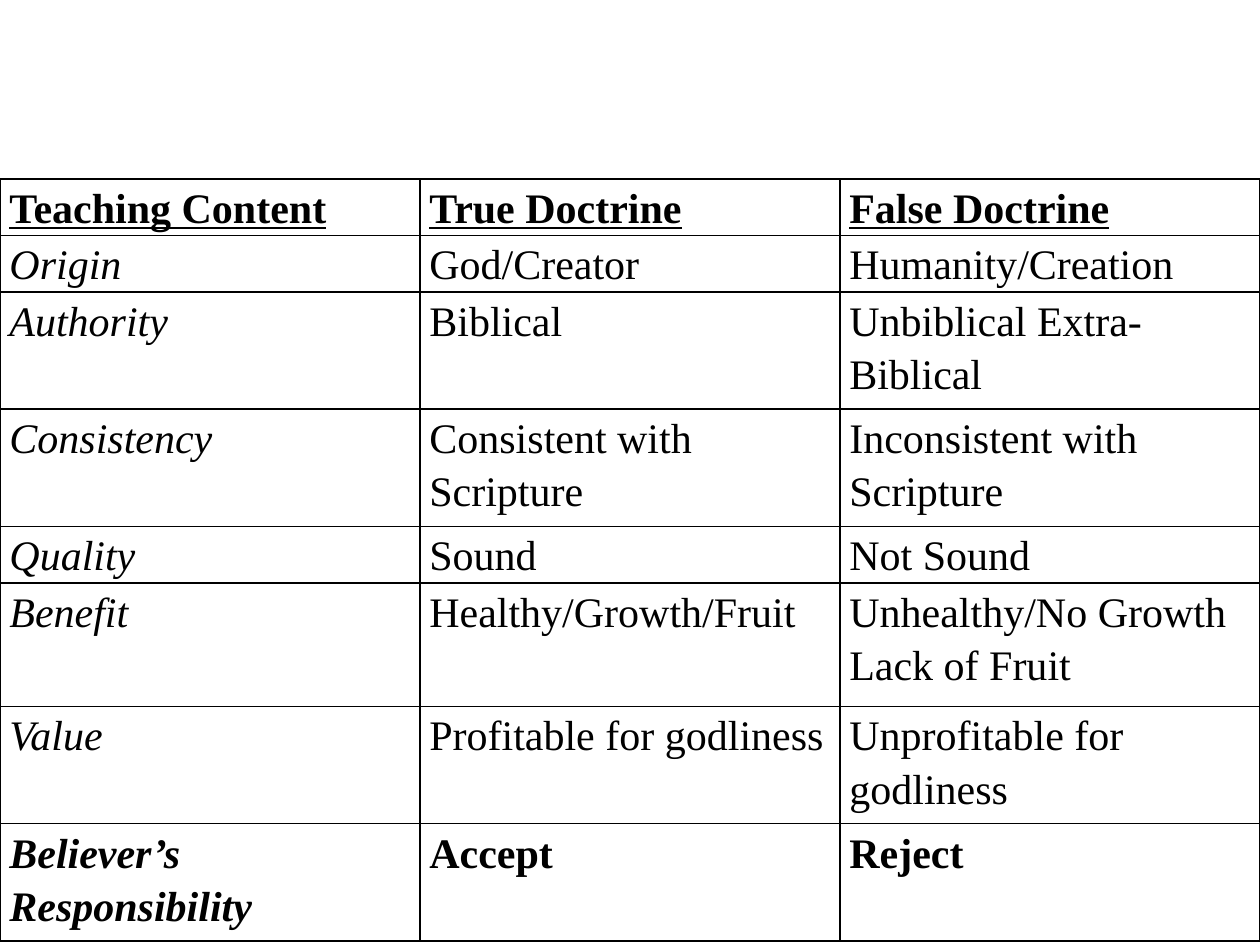
from dataclasses import dataclass

from lxml import etree
from pptx import Presentation
from pptx.dml.color import RGBColor
from pptx.oxml.ns import qn
from pptx.util import Pt

SIDES = ("a:lnL", "a:lnR", "a:lnT", "a:lnB")


@dataclass(frozen=True)
class Theme:
    ink: str = "000000"
    face: str = "Times New Roman"
    size: float = 24
    lead: float = 1.15
    rule: float = 1
    pad: float = 5.4


THEME = Theme()

WIDE, HIGH = 720, 540
TOP = 102.2
LOW, TALL, EXTRA = 32.3, 67, 70.7

ROWS = (
    (LOW, "Teaching Content", "True Doctrine", "False Doctrine"),
    (LOW, "Origin", "God/Creator", "Humanity/Creation"),
    (TALL, "Authority", "Biblical", "Unbiblical Extra-Biblical"),
    (TALL, "Consistency", "Consistent with Scripture",
     "Inconsistent with Scripture"),
    (LOW, "Quality", "Sound", "Not Sound"),
    (EXTRA, "Benefit", "Healthy/Growth/Fruit",
     "Unhealthy/No Growth Lack of Fruit"),
    (TALL, "Value", "Profitable for godliness", "Unprofitable for godliness"),
    (TALL, "Believer’s Responsibility", "Accept", "Reject"),
)


def apply(target, values):
    for name, value in values.items():
        setattr(target, name, value)


def frame(cell):
    """Rule all four sides of a cell."""
    props = cell._tc.get_or_add_tcPr()
    for side in SIDES:
        line = etree.SubElement(props, qn(side), w=str(Pt(THEME.rule)))
        fill = etree.SubElement(line, qn("a:solidFill"))
        etree.SubElement(fill, qn("a:srgbClr"), val=THEME.ink)


def style(row, col):
    """Return the emphasis for a table position."""
    head, last = row == 0, row == len(ROWS) - 1
    return {"bold": head or last, "underline": head,
            "italic": col == 0 and not head}


def write(cell, text, look):
    apply(cell, {"margin_left": Pt(THEME.pad), "margin_right": Pt(THEME.pad),
                 "margin_top": 0, "margin_bottom": 0})
    frame(cell)
    cell.fill.background()
    para = cell.text_frame.paragraphs[0]
    para.line_spacing = THEME.lead
    run = para.add_run()
    run.text = text
    apply(run.font, {"name": THEME.face, "size": Pt(THEME.size), **look})
    run.font.color.rgb = RGBColor.from_string(THEME.ink)


def add_grid(slide):
    count = len(ROWS[0]) - 1
    total = sum(row[0] for row in ROWS)
    grid = slide.shapes.add_table(
        len(ROWS), count, 0, Pt(TOP), Pt(WIDE), Pt(total)).table
    apply(grid, {"first_row": False, "horz_banding": False})
    for column in grid.columns:
        column.width = Pt(WIDE / count)
    for r, (height, *texts) in enumerate(ROWS):
        grid.rows[r].height = Pt(height)
        for c, text in enumerate(texts):
            write(grid.cell(r, c), text, style(r, c))


def main():
    deck = Presentation()
    apply(deck, {"slide_width": Pt(WIDE), "slide_height": Pt(HIGH)})
    slide = deck.slides.add_slide(deck.slide_layouts[6])
    add_grid(slide)
    deck.save("out.pptx")


if __name__ == "__main__":
    main()
